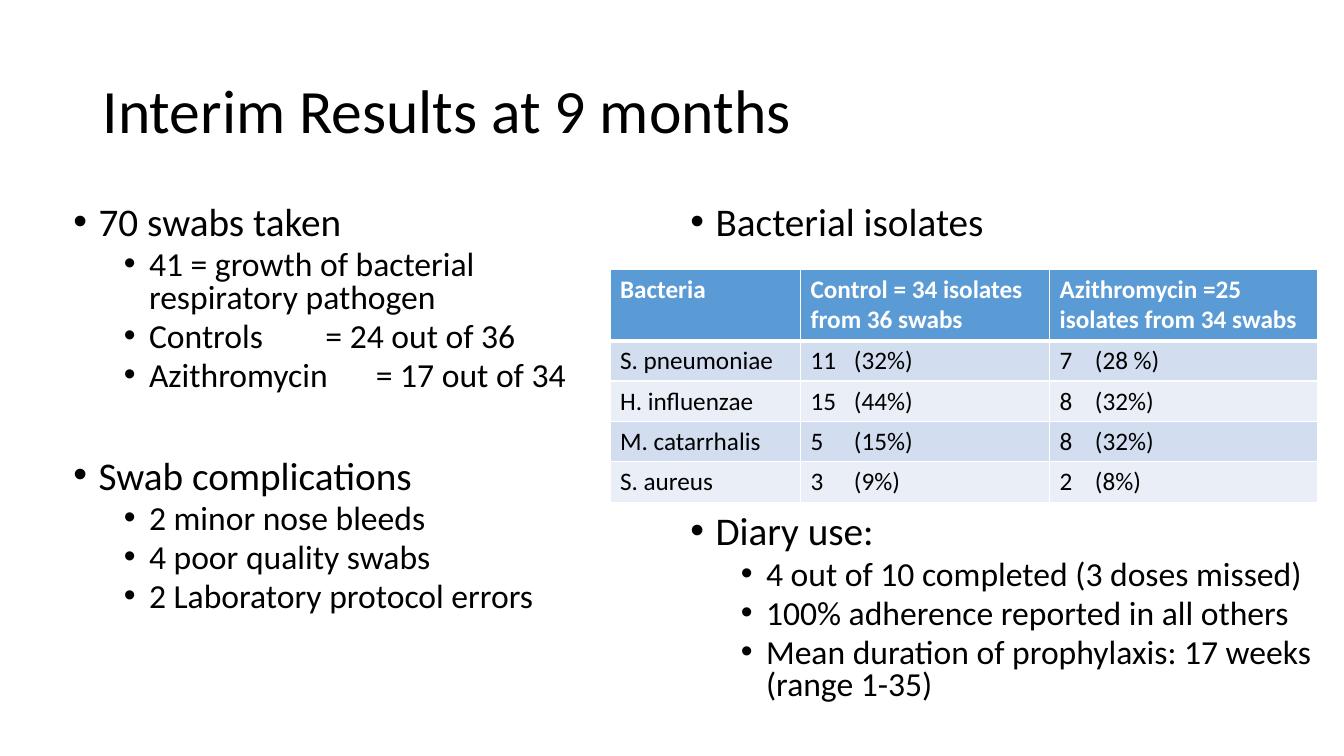
from lxml.etree import SubElement
from pptx import Presentation
from pptx.dml.color import RGBColor
from pptx.enum.text import MSO_ANCHOR
from pptx.oxml.ns import qn
from pptx.util import Inches, Pt

LEFT = [
    (0, "70 swabs taken", 10),
    (1, "41 = growth of bacterial respiratory pathogen", 5),
    (1, "Controls\t\t= 24 out of 36", 5),
    (1, "Azithromycin\t= 17 out of 34", 5),
    (0, "Swab complications", 47),
    (1, "2 minor nose bleeds", 5),
    (1, "4 poor quality swabs", 5),
    (1, "2 Laboratory protocol errors", 5),
]
RIGHT = [
    (0, "Bacterial isolates", 10),
    (0, "Diary use:", 194),
    (1, "4 out of 10 completed (3 doses missed)", 5),
    (1, "100% adherence reported in all others", 5),
    (1, "Mean duration of prophylaxis: 17 weeks (range 1-35)", 5),
]
ROWS = [
    ("Bacteria", "Control = 34 isolates from 36 swabs",
     "Azithromycin =25 isolates from 34 swabs"),
    ("S. pneumoniae", "11\t(32%)", "7\t(28 %)"),
    ("H. influenzae", "15\t(44%)", "8\t(32%)"),
    ("M. catarrhalis", "5\t(15%)", "8\t(32%)"),
    ("S. aureus", "3\t(9%)", "2\t(8%)"),
]
WIDTHS = (1.89, 2.47, 2.66)
STOPS = (None, 0.43, 0.35)


def color(code):
    """Turn a hex string into a colour."""
    return RGBColor.from_string(code)


def write(para, text, size=18, tint="000000", bold=False, line=None,
          before=0, level=None, stop=None):
    """Fill a paragraph with formatted text, an optional bullet and a tab stop."""
    run = para.add_run()
    run.text = text
    font = run.font
    font.name, font.size, font.bold = "Calibri", Pt(size), bold
    font.color.rgb = color(tint)
    para.line_spacing = line
    para.space_before = Pt(before)
    props = para._p.get_or_add_pPr()
    if level is not None:
        para.level = level
        props.set("marL", str(Inches(0.25 + 0.5 * level)))
        props.set("indent", str(Inches(-0.25)))
        SubElement(props, qn("a:buFont"), typeface="Arial")
        SubElement(props, qn("a:buChar"), char="•")
    if stop:
        tabs = SubElement(props, qn("a:tabLst"))
        SubElement(tabs, qn("a:tab"), pos=str(Inches(stop)), algn="l")


def frame(slide, box):
    """Add a wrapping text box and return its text frame."""
    body = slide.shapes.add_textbox(*map(Inches, box)).text_frame
    body.word_wrap = True
    return body


def title(slide, box, text):
    """Place the slide title, centred vertically in its box."""
    body = frame(slide, box)
    body.vertical_anchor = MSO_ANCHOR.MIDDLE
    write(body.paragraphs[0], text, size=44, line=0.9)


def bullets(slide, box, items):
    """Place a two-level bullet list in its box."""
    body = frame(slide, box)
    for i, (level, text, before) in enumerate(items):
        para = body.add_paragraph() if i else body.paragraphs[0]
        write(para, text, size=28 - 4 * level, line=0.8,
              before=before, level=level)


def edge(cell, head):
    """Draw white borders, thicker below the header row."""
    props = cell._tc.get_or_add_tcPr()
    for side in "LRTB":
        wide = 3 if head and side == "B" else 1
        line = SubElement(props, qn(f"a:ln{side}"), w=str(Pt(wide)))
        fill = SubElement(line, qn("a:solidFill"))
        SubElement(fill, qn("a:srgbClr"), val="FFFFFF")


def table(slide, box, rows):
    """Place the isolates table with a header and banded rows."""
    grid = slide.shapes.add_table(
        len(rows), len(WIDTHS), *map(Inches, box)).table
    for col, width in zip(grid.columns, WIDTHS):
        col.width = Inches(width)
    for r, row in enumerate(rows):
        head = r == 0
        grid.rows[r].height = Inches(0.71 if head else 0.4)
        shade = "5B9BD5" if head else ("EAEFF7", "D2DEEF")[r % 2]
        for c, text in enumerate(row):
            cell = grid.cell(r, c)
            edge(cell, head)
            cell.fill.solid()
            cell.fill.fore_color.rgb = color(shade)
            write(cell.text_frame.paragraphs[0], text, bold=head,
                  tint="FFFFFF" if head else "000000",
                  stop=None if head else STOPS[c])


def main():
    """Build the results slide and save it."""
    deck = Presentation()
    deck.slide_width, deck.slide_height = Inches(13.33), Inches(7.5)
    slide = deck.slides.add_slide(deck.slide_layouts[6])
    title(slide, (0.92, 0.4, 11.5, 1.45), "Interim Results at 9 months")
    bullets(slide, (0.63, 2, 5.67, 4.76), LEFT)
    bullets(slide, (6.75, 2, 6.44, 5.23), RIGHT)
    table(slide, (6.05, 2.67, 7.02, 2.31), ROWS)
    deck.save("out.pptx")


if __name__ == "__main__":
    main()
